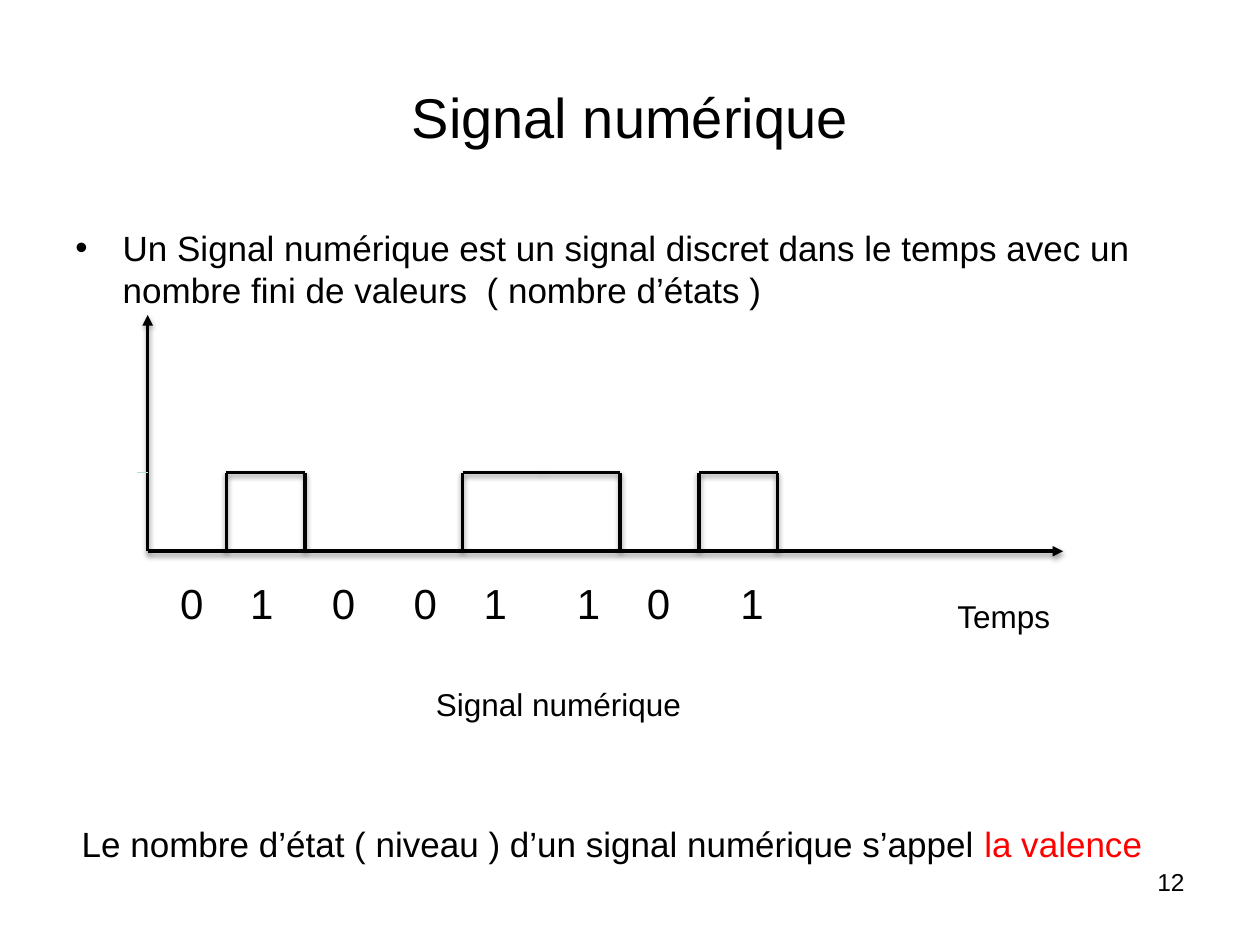
from itertools import pairwise

from lxml import etree
from pptx import Presentation
from pptx.dml.color import RGBColor
from pptx.enum.shapes import MSO_CONNECTOR
from pptx.enum.text import MSO_ANCHOR, PP_ALIGN
from pptx.oxml.ns import qn
from pptx.util import Pt

STRAIGHT = MSO_CONNECTOR.STRAIGHT
MIDDLE = MSO_ANCHOR.MIDDLE
LEFT, CENTER, RIGHT = PP_ALIGN.LEFT, PP_ALIGN.CENTER, PP_ALIGN.RIGHT

BLACK = RGBColor(0x00, 0x00, 0x00)
RED = RGBColor(0xFF, 0x00, 0x00)
PALE_TEAL = RGBColor(0xB6, 0xDC, 0xDF)
FONT = "Arial"

# Content
TITLE = "Signal numérique"
DEFINITION = ("Un Signal numérique est un signal discret dans le temps avec un "
              "nombre fini de valeurs  ( nombre d’états )")
BITS = "01001101"
BIT_TABS = (40, 86.7, 133.4, 173.4, 226.8, 266.8, 320.2)
VALENCE_TEXT = "Le nombre d’état ( niveau ) d’un signal numérique s’appel "
VALENCE_TERM = "la valence"

# Labels: text, (left, top, width, height), size, alignment, wrap
LABELS = [
    ("Temps", (540, 337.7, 73.4, 29), 18, LEFT, False),
    ("Signal numérique", (242, 388, 161, 29), 18, LEFT, False),
    ("12", (516, 492, 168, 37.4), 14, RIGHT, True),
]

# Chart geometry
ORIGIN_X, BASELINE, HIGH = 84.4, 315, 270
BIT_WIDTH = 45
AXIS_TOP, AXIS_RIGHT = 180, 607.5

EMU_PER_POINT = Pt(1)


def set_font(font, size, color=BLACK):
    font.name, font.size, font.color.rgb = FONT, Pt(size), color


def add_text(slide, text, box, size, alignment=LEFT, wrap=True):
    frame = slide.shapes.add_textbox(*map(Pt, box)).text_frame
    frame.word_wrap = wrap
    paragraph = frame.paragraphs[0]
    paragraph.text = text
    paragraph.alignment = alignment
    set_font(paragraph.font, size)
    return paragraph


def add_line(slide, start, end, color=BLACK, width=2, arrow=False, shadow=True):
    line = slide.shapes.add_connector(STRAIGHT, *map(Pt, start + end))
    line.line.color.rgb = color
    line.line.width = Pt(width)
    if arrow:
        etree.SubElement(line.line._get_or_add_ln(), qn("a:tailEnd"), type="triangle")
    effects = etree.SubElement(line._element.spPr, qn("a:effectLst"))
    if shadow:
        outer = etree.SubElement(
            effects, qn("a:outerShdw"), blurRad=str(round(3.1 * EMU_PER_POINT)),
            dist=str(round(1.6 * EMU_PER_POINT)), dir="5400000", rotWithShape="0")
        shade = etree.SubElement(outer, qn("a:srgbClr"), val=str(BLACK))
        etree.SubElement(shade, qn("a:alpha"), val="38000")


presentation = Presentation()
presentation.slide_width, presentation.slide_height = Pt(720), Pt(540)
slide = presentation.slides.add_slide(presentation.slide_layouts[5])

# Title
title = slide.shapes.title
title.left, title.top, title.width, title.height = map(Pt, (36, 21.6, 648, 90))
title.text_frame.text = TITLE
title.text_frame.vertical_anchor = MIDDLE
title_paragraph = title.text_frame.paragraphs[0]
title_paragraph.alignment = CENTER
set_font(title_paragraph.font, 32)

# Bulleted definition
definition = add_text(slide, DEFINITION, (36, 126, 648, 76.3), 20)
definition.space_before = Pt(4)
properties = definition._p.get_or_add_pPr()
properties.set("marL", str(Pt(27)))
properties.set("indent", str(-Pt(27)))
bullet_font = etree.Element(qn("a:buFont"), typeface=FONT)
bullet = etree.Element(qn("a:buChar"), char="•")
properties.find(qn("a:defRPr")).addprevious(bullet_font)
bullet_font.addnext(bullet)

# Axes and level mark
origin = (ORIGIN_X, BASELINE)
add_line(slide, origin, (ORIGIN_X, AXIS_TOP), arrow=True)
add_line(slide, origin, (AXIS_RIGHT, BASELINE), arrow=True)
add_line(slide, (ORIGIN_X - 6, HIGH), (ORIGIN_X, HIGH), PALE_TEAL, 0.75, shadow=False)

# Waveform: an edge at each change of level, a top over each 1
for index, (before, after) in enumerate(pairwise("0" + BITS + "0")):
    x = ORIGIN_X + index * BIT_WIDTH
    if before != after:
        add_line(slide, (x, BASELINE), (x, HIGH))
    if after == "1":
        add_line(slide, (x, HIGH), (x + BIT_WIDTH, HIGH))

# Bit values, set out on tab stops
bits = add_text(slide, "\t".join(BITS), (95.8, 326.2, 444, 36.7), 24)
tabs = etree.Element(qn("a:tabLst"))
bits._p.get_or_add_pPr().find(qn("a:defRPr")).addprevious(tabs)
for position in BIT_TABS:
    etree.SubElement(tabs, qn("a:tab"), pos=str(Pt(position)), algn="l")

# Labels and closing sentence
for label in LABELS:
    add_text(slide, *label)
valence = add_text(slide, VALENCE_TEXT, (39.6, 466.6, 630.7, 31.7), 20, wrap=False)
term = valence.add_run()
term.text = VALENCE_TERM
set_font(term.font, 20, RED)

presentation.save("out.pptx")
